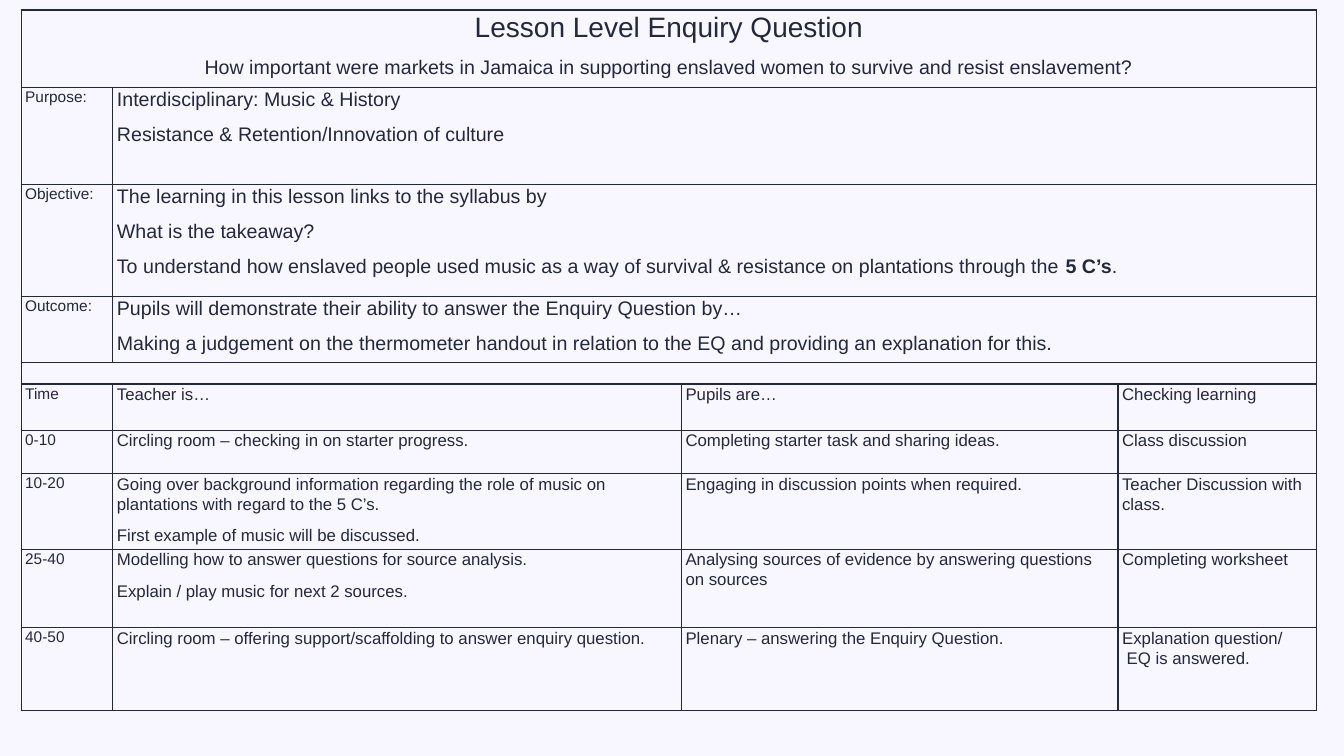
from lxml import etree
from pptx import Presentation
from pptx import util as u
from pptx.dml.color import RGBColor
from pptx.enum import text
from pptx.oxml.ns import qn

INK, BACKGROUND, FONT = "24283C", "F8F7FF", "Arial"
TITLE_SIZE, BODY_SIZE, LABEL_SIZE, STEP_SIZE = 20, 14, 11, 12
LEFT, TOP = 0.21, 0.1
COLUMNS = [0.91, 5.64, 4.33, 1.97]
ROWS = [0.77, 0.96, 1.11, 0.66, 0.21, 0.46, 0.43, 0.75, 0.78, 0.82]

# A cell is a list of paragraphs; a tuple holds plain and bold runs in turn.
HEADING = [
    "Lesson Level Enquiry Question",
    "How important were markets in Jamaica in supporting enslaved women to survive and resist enslavement?",
]
AIMS = [
    ("Purpose:", ["Interdisciplinary: Music & History",
                  "Resistance & Retention/Innovation of culture"]),
    ("Objective:", ["The learning in this lesson links to the syllabus by",
                    "What is the takeaway?",
                    ("To understand how enslaved people used music as a way of survival "
                     "& resistance on plantations through the ", "5 C’s", ".")]),
    ("Outcome:", ["Pupils will demonstrate their ability to answer the Enquiry Question by…",
                  "Making a judgement on the thermometer handout in relation to the EQ "
                  "and providing an explanation for this."]),
]
STEPS = [
    ("Time", ["Teacher is…"], ["Pupils are…"], ["Checking learning"]),
    ("0-10", ["Circling room – checking in on starter progress."],
     ["Completing starter task and sharing ideas."], ["Class discussion"]),
    ("10-20", ["Going over background information regarding the role of music on "
               "plantations with regard to the 5 C’s.",
               "First example of music will be discussed."],
     ["Engaging in discussion points when required."], ["Teacher Discussion with class."]),
    ("25-40", ["Modelling how to answer questions for source analysis.",
               "Explain / play music for next 2 sources."],
     ["Analysing sources of evidence by answering questions on sources"],
     ["Completing worksheet"]),
    ("40-50", ["Circling room – offering support/scaffolding to answer enquiry question."],
     ["Plenary – answering the Enquiry Question."],
     ["Explanation question/\v EQ is answered."]),
]


def color(value):
    return RGBColor.from_string(value)


def style_cell(cell):
    """Give a cell thin borders, no fill and narrow margins."""
    properties = cell._tc.get_or_add_tcPr()
    for side in ("lnL", "lnR", "lnT", "lnB"):
        line = etree.SubElement(properties, qn(f"a:{side}"), w=str(u.Pt(1)))
        fill = etree.SubElement(line, qn("a:solidFill"))
        etree.SubElement(fill, qn("a:srgbClr"), val=INK)
    cell.fill.background()
    cell.margin_left = cell.margin_right = u.Inches(0.04)
    cell.margin_top = cell.margin_bottom = 0


def write(cell, paragraphs, sizes, alignment=text.PP_ALIGN.LEFT):
    frame = cell.text_frame
    for index, (content, size) in enumerate(zip(paragraphs, sizes)):
        paragraph = frame.add_paragraph() if index else frame.paragraphs[0]
        if isinstance(content, tuple):
            for position, words in enumerate(content):
                run = paragraph.add_run()
                run.text = words
                run.font.bold = position % 2 == 1
        else:
            paragraph.text = content
        paragraph.alignment = alignment
        paragraph.line_spacing = 1.07
        paragraph.space_after = u.Pt(8)
        paragraph.font.size = u.Pt(size)
        paragraph.font.name = FONT
        paragraph.font.color.rgb = color(INK)


def merge_row(table, row, first_column):
    table.cell(row, first_column).merge(table.cell(row, len(COLUMNS) - 1))


def add_plan(slide):
    table = slide.shapes.add_table(
        len(ROWS), len(COLUMNS), u.Inches(LEFT), u.Inches(TOP),
        u.Inches(sum(COLUMNS)), u.Inches(sum(ROWS))).table
    table.first_row = table.horz_banding = False
    for column, width in zip(table.columns, COLUMNS):
        column.width = u.Inches(width)
    for row, height in zip(table.rows, ROWS):
        row.height = u.Inches(height)
    for cell in table.iter_cells():
        style_cell(cell)

    merge_row(table, 0, 0)
    write(table.cell(0, 0), HEADING, [TITLE_SIZE, BODY_SIZE], text.PP_ALIGN.CENTER)
    for row, (label, lines) in enumerate(AIMS, 1):
        merge_row(table, row, 1)
        write(table.cell(row, 0), [label], [LABEL_SIZE])
        write(table.cell(row, 1), lines, [BODY_SIZE] * len(lines))

    spacer = len(AIMS) + 1
    merge_row(table, spacer, 0)
    for column in range(len(COLUMNS)):
        # The end mark's size keeps the empty row from growing.
        paragraph = table.cell(spacer, column).text_frame.paragraphs[0]
        etree.SubElement(paragraph._p, qn("a:endParaRPr"), sz="800")

    for row, (time, *activities) in enumerate(STEPS, spacer + 1):
        write(table.cell(row, 0), [time], [LABEL_SIZE])
        for column, lines in enumerate(activities, 1):
            write(table.cell(row, column), lines, [STEP_SIZE] * len(lines))


def main():
    presentation = Presentation()
    presentation.slide_width = u.Inches(13.33)
    presentation.slide_height = u.Inches(7.5)
    slide = presentation.slides.add_slide(presentation.slide_layouts[6])
    slide.background.fill.solid()
    slide.background.fill.fore_color.rgb = color(BACKGROUND)
    add_plan(slide)
    presentation.save("out.pptx")


if __name__ == "__main__":
    main()
